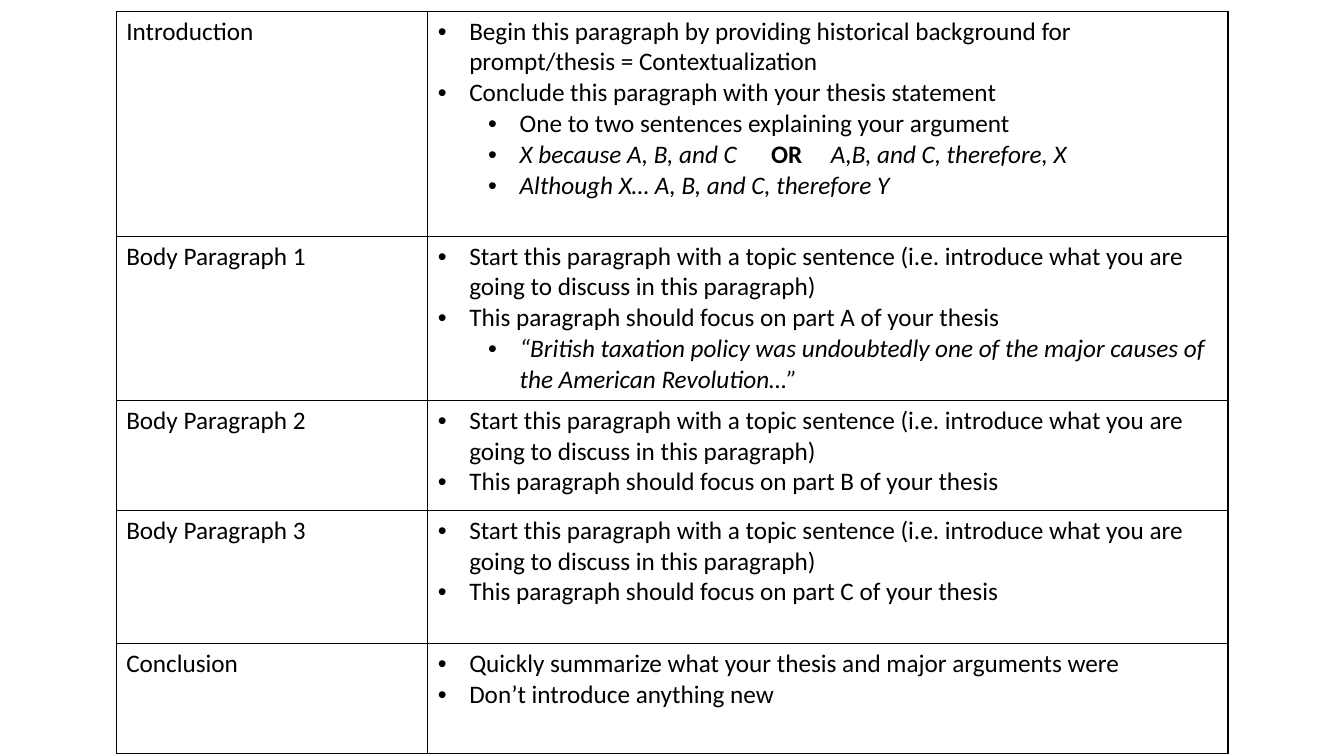
from dataclasses import dataclass, field

from lxml import etree
from pptx import Presentation
from pptx import util as u
from pptx.dml import color
from pptx.enum import text
from pptx.oxml import ns

COLORS: dict[str, str] = {"ink": "000000", "paper": "FFFFFF"}
BASE_FONT = {"name": "Calibri", "size": u.Pt(18), "bold": False, "italic": False}
CELL_FORMAT = {
    "margin_left": u.Pt(7.2),
    "margin_right": u.Pt(7.2),
    "margin_top": u.Pt(3.6),
    "margin_bottom": u.Pt(3.6),
    "vertical_anchor": text.MSO_ANCHOR.TOP,
}
TABLE_FORMAT = {"first_row": False, "horz_banding": False}
BULLET_INDENT = 22.5
LEVEL_STEP = 36
COLUMN_WIDTHS = (222.5, 571.7)


@dataclass(frozen=True)
class Phrase:
    words: str
    style: dict[str, bool] = field(default_factory=dict)
    spacing: float = 0


@dataclass(frozen=True)
class Point:
    phrases: tuple[Phrase, ...]
    level: int = 0


@dataclass(frozen=True)
class Section:
    heading: str
    points: tuple[Point, ...]
    height: float


def plain(words: str, level: int = 0) -> Point:
    return Point((Phrase(words),), level)


def example(words: str) -> Point:
    return Point((Phrase(words, {"italic": True}),), 1)


def body_section(number: int, height: float, *examples: Point) -> Section:
    part = "ABC"[number - 1]
    return Section(
        f"Body Paragraph {number}",
        (
            plain("Start this paragraph with a topic sentence (i.e. introduce "
                  "what you are going to discuss in this paragraph)"),
            plain(f"This paragraph should focus on part {part} of your thesis"),
            *examples,
        ),
        height,
    )


THESIS_PATTERNS = Point(
    (
        Phrase("X because A, B, and C", {"italic": True}),
        Phrase(" ", spacing=20.3),
        Phrase("OR", {"bold": True}),
        Phrase(" ", spacing=16.3),
        Phrase("A,B, and C, therefore, X", {"italic": True}),
    ),
    1,
)

SECTIONS = (
    Section(
        "Introduction",
        (
            plain("Begin this paragraph by providing historical background "
                  "for prompt/thesis = Contextualization"),
            plain("Conclude this paragraph with your thesis statement"),
            plain("One to two sentences explaining your argument", 1),
            THESIS_PATTERNS,
            example("Although X… A, B, and C, therefore Y"),
        ),
        160.7,
    ),
    body_section(
        1, 117.2,
        example("“British taxation policy was undoubtedly one of the major "
                "causes of the American Revolution…”"),
    ),
    body_section(2, 78.6),
    body_section(3, 95),
    Section(
        "Conclusion",
        (
            plain("Quickly summarize what your thesis and major arguments were"),
            plain("Don’t introduce anything new"),
        ),
        78.6,
    ),
)


def apply_format(target: object, values: dict) -> None:
    for attribute, value in values.items():
        setattr(target, attribute, value)


def add_phrase(paragraph, phrase: Phrase) -> None:
    run = paragraph.add_run()
    run.text = phrase.words
    apply_format(run.font, BASE_FONT | phrase.style)
    run.font.color.rgb = color.RGBColor.from_string(COLORS["ink"])
    if phrase.spacing:
        run.font._element.set("spc", str(round(phrase.spacing * 100)))


def add_bullet(paragraph, level: int) -> None:
    paragraph.level = level
    properties = paragraph._p.get_or_add_pPr()
    properties.set("marL", str(u.Pt(BULLET_INDENT + LEVEL_STEP * level)))
    properties.set("indent", str(u.Pt(-BULLET_INDENT)))
    etree.SubElement(properties, ns.qn("a:buFont"), typeface="Arial")
    etree.SubElement(properties, ns.qn("a:buChar"), char="•")


def format_cell(cell) -> None:
    apply_format(cell, CELL_FORMAT)
    properties = cell._tc.get_or_add_tcPr()
    for side in "LRTB":
        border = etree.SubElement(properties, ns.qn(f"a:ln{side}"), w=str(u.Pt(1)))
        fill = etree.SubElement(border, ns.qn("a:solidFill"))
        etree.SubElement(fill, ns.qn("a:srgbClr"), val=COLORS["ink"])
    cell.fill.solid()
    cell.fill.fore_color.rgb = color.RGBColor.from_string(COLORS["paper"])


def write_points(cell, points: tuple[Point, ...]) -> None:
    frame = cell.text_frame
    for index, point in enumerate(points):
        paragraph = frame.add_paragraph() if index else frame.paragraphs[0]
        add_bullet(paragraph, point.level)
        for phrase in point.phrases:
            add_phrase(paragraph, phrase)


def add_outline(slide, sections: tuple[Section, ...]) -> None:
    outline = slide.shapes.add_table(
        len(sections), len(COLUMN_WIDTHS), u.Pt(83), u.Pt(8),
        u.Pt(sum(COLUMN_WIDTHS)), u.Pt(sum(s.height for s in sections)),
    ).table
    apply_format(outline, TABLE_FORMAT)
    for column, width in zip(outline.columns, COLUMN_WIDTHS):
        column.width = u.Pt(width)
    for row, section in zip(outline.rows, sections):
        row.height = u.Pt(section.height)
        heading_cell, advice_cell = row.cells
        for cell in (heading_cell, advice_cell):
            format_cell(cell)
        add_phrase(heading_cell.text_frame.paragraphs[0], Phrase(section.heading))
        write_points(advice_cell, section.points)


def main() -> None:
    essay_guide = Presentation()
    apply_format(essay_guide, {"slide_width": u.Pt(960), "slide_height": u.Pt(540)})
    slide = essay_guide.slides.add_slide(essay_guide.slide_layouts[6])
    add_outline(slide, SECTIONS)
    essay_guide.save("out.pptx")


if __name__ == "__main__":
    main()
